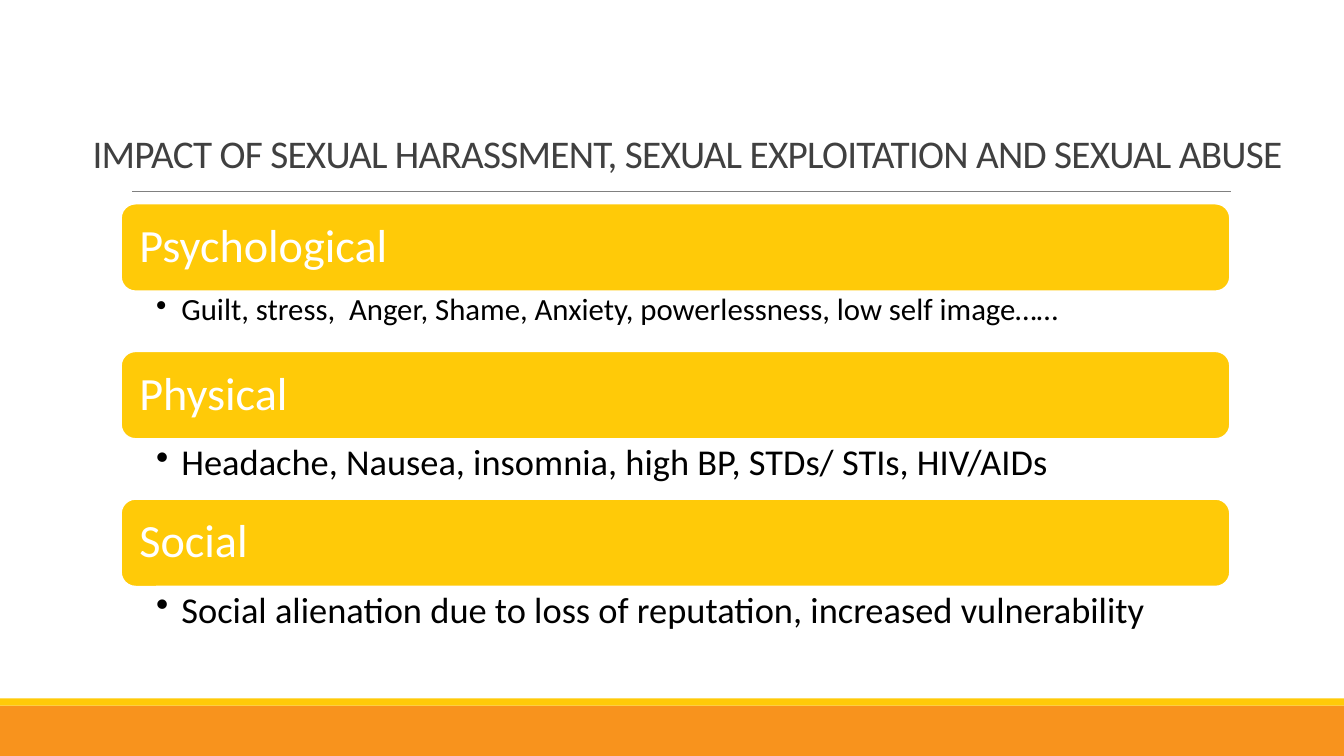
from dataclasses import dataclass

from lxml import etree
from pptx import Presentation
from pptx import util as u
from pptx.dml import color
from pptx.enum import shapes, text
from pptx.oxml import ns

FONT = "Calibri"
WHITE, BLACK, GREY, RULE_GREY = "FFFFFF", "000000", "404040", "808080"
YELLOW, ORANGE = "FFCA08", "F8931D"
SLIDE_WIDTH, SLIDE_HEIGHT = 13.33, 7.5
LEFT, WIDTH = 1.2, 11
FIRST_TOP, PITCH = 2.02, 1.465
HEADING_HEIGHT, DETAIL_HEIGHT = 0.87, 0.6


@dataclass(frozen=True)
class Impact:
    heading: str
    detail: str
    size: float = 26
    right_inset: float = 0.26
    vertical_inset: float = 0.05


@dataclass(frozen=True)
class Band:
    top: float
    height: float
    fill: str


IMPACTS = [
    Impact(
        "Psychological",
        "Guilt, stress,  Anger, Shame, Anxiety, powerlessness, low self image……",
        size=22,
        right_inset=0.17,
        vertical_inset=0.03,
    ),
    Impact("Physical", "Headache, Nausea, insomnia, high BP, STDs/ STIs, HIV/AIDs"),
    Impact("Social", "Social alienation due to loss of reputation, increased vulnerability"),
]
BANDS = [Band(7, 0.5, ORANGE), Band(6.93, 0.07, YELLOW)]


def rgb(value: str) -> color.RGBColor:
    return color.RGBColor.from_string(value)


def add_box(slide, kind, left: float, top: float, width: float, height: float,
            fill: str, outline: str | None = None):
    shape = slide.shapes.add_shape(
        kind, u.Inches(left), u.Inches(top), u.Inches(width), u.Inches(height)
    )
    shape.shadow.inherit = False
    shape.fill.solid()
    shape.fill.fore_color.rgb = rgb(fill)
    if outline:
        shape.line.color.rgb = rgb(outline)
        shape.line.width = u.Pt(1.25)
    else:
        shape.line.fill.background()
    return shape


def add_text_box(slide, left: float, top: float, width: float, height: float):
    return slide.shapes.add_textbox(
        u.Inches(left), u.Inches(top), u.Inches(width), u.Inches(height)
    )


def write_text(shape, content: str, *, size: float, fill: str,
               anchor=text.MSO_ANCHOR.TOP, insets=(0.1, 0.05, 0.1, 0.05),
               line_spacing: float = 0.9, tracking: float = 0,
               bullet: bool = False) -> None:
    frame = shape.text_frame
    frame.word_wrap = True
    frame.vertical_anchor = anchor
    frame.margin_left, frame.margin_top, frame.margin_right, frame.margin_bottom = (
        u.Inches(inset) for inset in insets
    )
    paragraph = frame.paragraphs[0]
    paragraph.alignment = text.PP_ALIGN.LEFT
    paragraph.line_spacing = line_spacing
    run = paragraph.add_run()
    run.text = content
    run.font.name = FONT
    run.font.size = u.Pt(size)
    run.font.color.rgb = rgb(fill)
    if tracking:
        run.font._element.set("spc", str(round(tracking * 100)))
    if bullet:
        properties = paragraph._p.get_or_add_pPr()
        properties.set("marL", str(u.Inches(0.25)))
        properties.set("indent", str(u.Inches(-0.25)))
        etree.SubElement(properties, ns.qn("a:buChar")).set("char", "•")


def add_rule(slide, left: float, right: float, top: float) -> None:
    rule = slide.shapes.add_connector(
        shapes.MSO_CONNECTOR.STRAIGHT,
        u.Inches(left), u.Inches(top), u.Inches(right), u.Inches(top),
    )
    rule.line.color.rgb = rgb(RULE_GREY)
    rule.line.width = u.Pt(0.5)
    etree.SubElement(rule._element.spPr, ns.qn("a:effectLst"))


def add_impact(slide, impact: Impact, top: float) -> None:
    heading = add_box(
        slide, shapes.MSO_SHAPE.ROUNDED_RECTANGLE,
        LEFT, top, WIDTH, HEADING_HEIGHT, YELLOW, WHITE,
    )
    write_text(
        heading, impact.heading, size=33, fill=WHITE,
        anchor=text.MSO_ANCHOR.MIDDLE, insets=(0.14, 0.14, 0.14, 0.14),
    )
    detail = add_text_box(slide, LEFT, top + HEADING_HEIGHT, WIDTH, DETAIL_HEIGHT)
    write_text(
        detail, impact.detail, size=impact.size, fill=BLACK, bullet=True,
        insets=(0.35, impact.vertical_inset, impact.right_inset, impact.vertical_inset),
    )


def main() -> None:
    presentation = Presentation()
    presentation.slide_width = u.Inches(SLIDE_WIDTH)
    presentation.slide_height = u.Inches(SLIDE_HEIGHT)
    slide = presentation.slides.add_slide(presentation.slide_layouts[6])

    for band in BANDS:
        add_box(slide, shapes.MSO_SHAPE.RECTANGLE, 0, band.top, SLIDE_WIDTH,
                band.height, band.fill)
    add_rule(slide, 1.31, 12.21, 1.9)

    title = add_text_box(slide, 0.82, 0.21, 12.13, 1.59)
    write_text(
        title, "IMPACT OF SEXUAL HARASSMENT, SEXUAL EXPLOITATION AND SEXUAL ABUSE",
        size=28, fill=GREY, anchor=text.MSO_ANCHOR.BOTTOM,
        line_spacing=0.85, tracking=-0.5,
    )
    for index, impact in enumerate(IMPACTS):
        add_impact(slide, impact, FIRST_TOP + index * PITCH)

    presentation.save("out.pptx")


if __name__ == "__main__":
    main()
